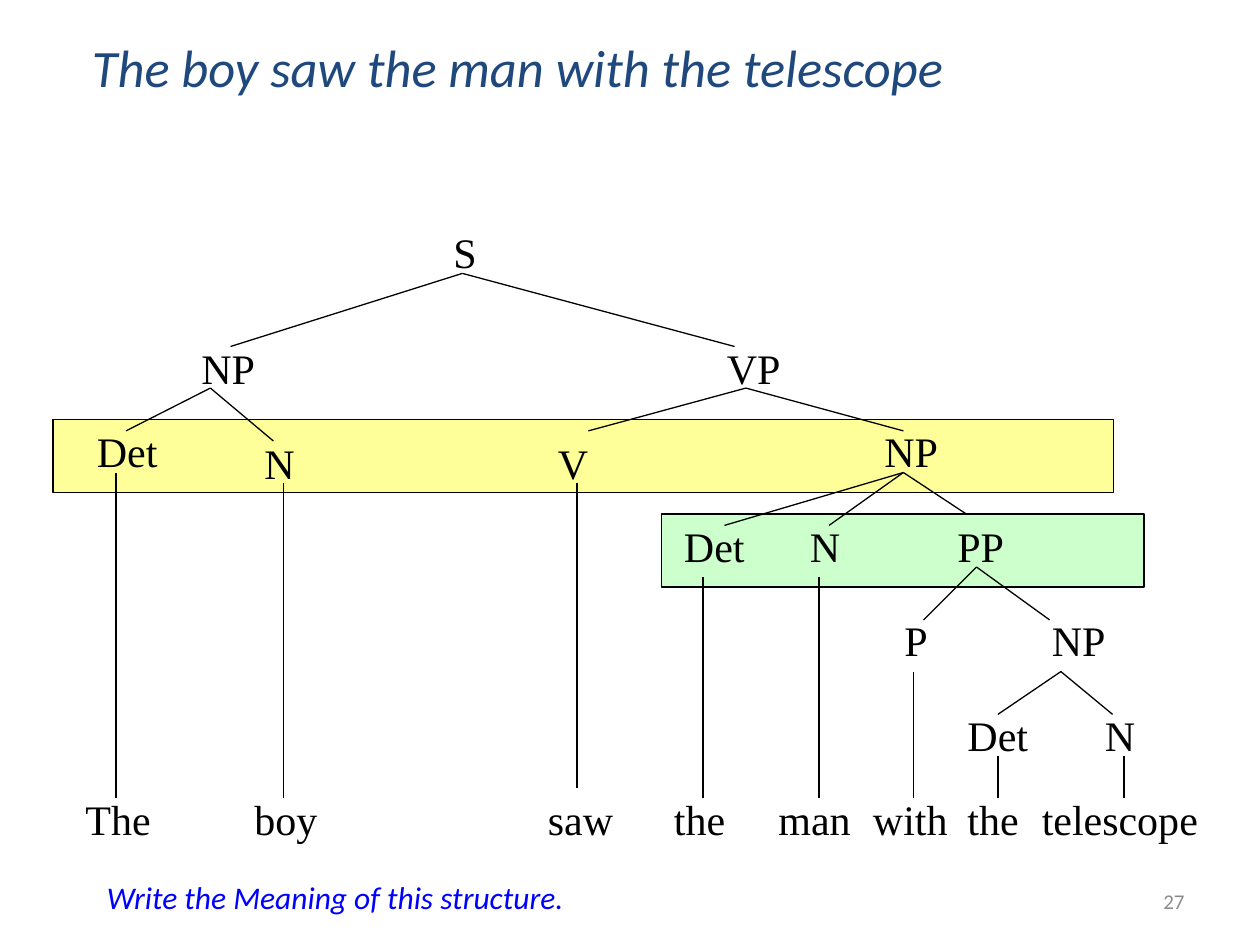
from dataclasses import dataclass

from pptx import Presentation
from pptx import util as u
from pptx.dml.color import RGBColor
from pptx.enum import shapes, text
from pptx.oxml.ns import qn
from lxml import etree


@dataclass(frozen=True)
class Theme:
    line: str = "000000"
    line_width: float = 0.75
    yellow: str = "FFFF99"
    green: str = "CCFFCC"
    title = dict(name="Calibri", size=30, color="1F497D", italic=True)
    node = dict(name="Times New Roman", size=24, color="000000")
    task = dict(name="Calibri", size=18, color="0000FF", italic=True)
    number = dict(name="Calibri", size=12, color="8C8C8C")


@dataclass(frozen=True)
class Box:
    left: float
    top: float
    width: float
    height: float

    def inside(self, left, top, width, height):
        """Return the absolute box of a part placed relative to this one."""
        return Box(self.left + left, self.top + top, width, height)

    def lengths(self):
        return [u.Inches(v) for v in (self.left, self.top, self.width, self.height)]


THEME = Theme()

# Syntax tree, relative to its box: label, left, top
NODES = [
    ("S", 3, 0), ("NP", 1, 0.92), ("VP", 5.17, 0.92),
    ("Det", 0.17, 1.58), ("N", 1.5, 1.67), ("V", 3.83, 1.67), ("NP", 6.42, 1.58),
    ("Det", 4.83, 2.33), ("N", 5.83, 2.33), ("PP", 7, 2.33),
    ("P", 6.58, 3.08), ("NP", 7.75, 3.08), ("Det", 7.08, 3.83), ("N", 8.17, 3.83),
]
NODE_WIDTHS = {"S": 0.42, "N": 0.42, "V": 0.67, "P": 0.58, "PP": 0.58}
# Word, left, width
WORDS = [
    ("The", 0.08, 0.75), ("boy", 1.42, 0.92), ("saw", 3.75, 0.83),
    ("the", 4.75, 0.75), ("man", 5.58, 0.83), ("with", 6.33, 0.83),
    ("the", 7.08, 0.75), ("telescope", 7.67, 1.5),
]
# Parent point, child points
FORKS = [
    ((3.17, 0.42), [(1.33, 1), (5.33, 1)]),
    ((1.17, 1.33), [(0.5, 1.67), (1.67, 1.75)]),
    ((5.42, 1.33), [(4.17, 1.67), (6.67, 1.67)]),
    ((6.67, 2), [(5.25, 2.42), (6.08, 2.42), (7.17, 2.33)]),
    ((7.25, 2.75), [(6.83, 3.17), (7.83, 3.17)]),
    ((7.92, 3.58), [(7.42, 3.92), (8.33, 3.92)]),
]
# Stem from a word class down to its word: x, top, bottom
STEMS = [
    (0.42, 2, 4.58), (1.75, 2.08, 4.58), (4.08, 2.08, 4.5), (5.08, 2.83, 4.58),
    (6, 2.83, 4.58), (6.75, 3.58, 4.58), (7.42, 4.25, 4.58), (8.42, 4.25, 4.58),
]


def write(frame, words, style, **layout):
    """Fill a text frame with one styled paragraph."""
    for name, value in {"word_wrap": True, **layout}.items():
        setattr(frame, name, value)
    para = frame.paragraphs[0]
    span = para.add_run()
    span.text = words
    for name, value in style.items():
        if name == "color":
            span.font.color.rgb = RGBColor.from_string(value)
        else:
            setattr(span.font, name, u.Pt(value) if name == "size" else value)
    return para


def add_label(page, box, words, style, **layout):
    label = page.shapes.add_textbox(*box.lengths())
    return write(label.text_frame, words, style, **layout)


def outline(line):
    line.color.rgb = RGBColor.from_string(THEME.line)
    line.width = u.Pt(THEME.line_width)


def add_band(page, box, fill):
    band = page.shapes.add_shape(shapes.MSO_SHAPE.RECTANGLE, *box.lengths())
    band.shadow.inherit = False
    band.fill.solid()
    band.fill.fore_color.rgb = RGBColor.from_string(fill)
    outline(band.line)


def add_branch(page, box, start, end):
    points = [u.Inches(v) for x, y in (start, end) for v in (box.left + x, box.top + y)]
    branch = page.shapes.add_connector(shapes.MSO_CONNECTOR.STRAIGHT, *points)
    outline(branch.line)
    etree.SubElement(branch._element.spPr, qn("a:effectLst"))


def add_title(page, box):
    title = page.shapes.title
    title.left, title.top, title.width, title.height = box.lengths()
    para = write(title.text_frame, "The boy saw the man with the telescope", THEME.title,
                 auto_size=text.MSO_AUTO_SIZE.NONE,
                 vertical_anchor=text.MSO_ANCHOR.BOTTOM)
    para.alignment = text.PP_ALIGN.LEFT
    para.line_spacing = 1.4


def add_tree(page, box):
    add_band(page, box.inside(4.75, 2.33, 3.83, 0.58), THEME.green)
    add_band(page, box.inside(-0.08, 1.58, 8.42, 0.58), THEME.yellow)
    for parent, children in FORKS:
        for child in children:
            add_branch(page, box, parent, child)
    for x, top, bottom in STEMS:
        add_branch(page, box, (x, top), (x, bottom))
    labels = [(name, x, y, NODE_WIDTHS.get(name, 0.75)) for name, x, y in NODES]
    labels += [(word, x, 4.5, width) for word, x, width in WORDS]
    for words, x, y, width in labels:
        add_label(page, box.inside(x, y, width, 0.5), words, THEME.node)


def add_footer(page, box):
    add_label(page, box.inside(0, 0, 7.92, 0.4),
              "Write the Meaning of this structure.", THEME.task)
    number = add_label(page, box.inside(6.42, 0.03, 2.33, 0.4), "27", THEME.number,
                       vertical_anchor=text.MSO_ANCHOR.MIDDLE)
    number.alignment = text.PP_ALIGN.RIGHT


def main():
    deck = Presentation()
    deck.slide_width, deck.slide_height = u.Inches(10), u.Inches(7.5)
    page = deck.slides.add_slide(deck.slide_layouts.get_by_name("Title Only"))
    add_title(page, Box(0.63, 0.33, 8.75, 0.5))
    add_tree(page, Box(0.5, 1.75, 9.17, 5))
    add_footer(page, Box(0.75, 6.92, 8.75, 0.43))
    deck.save("out.pptx")


if __name__ == "__main__":
    main()
